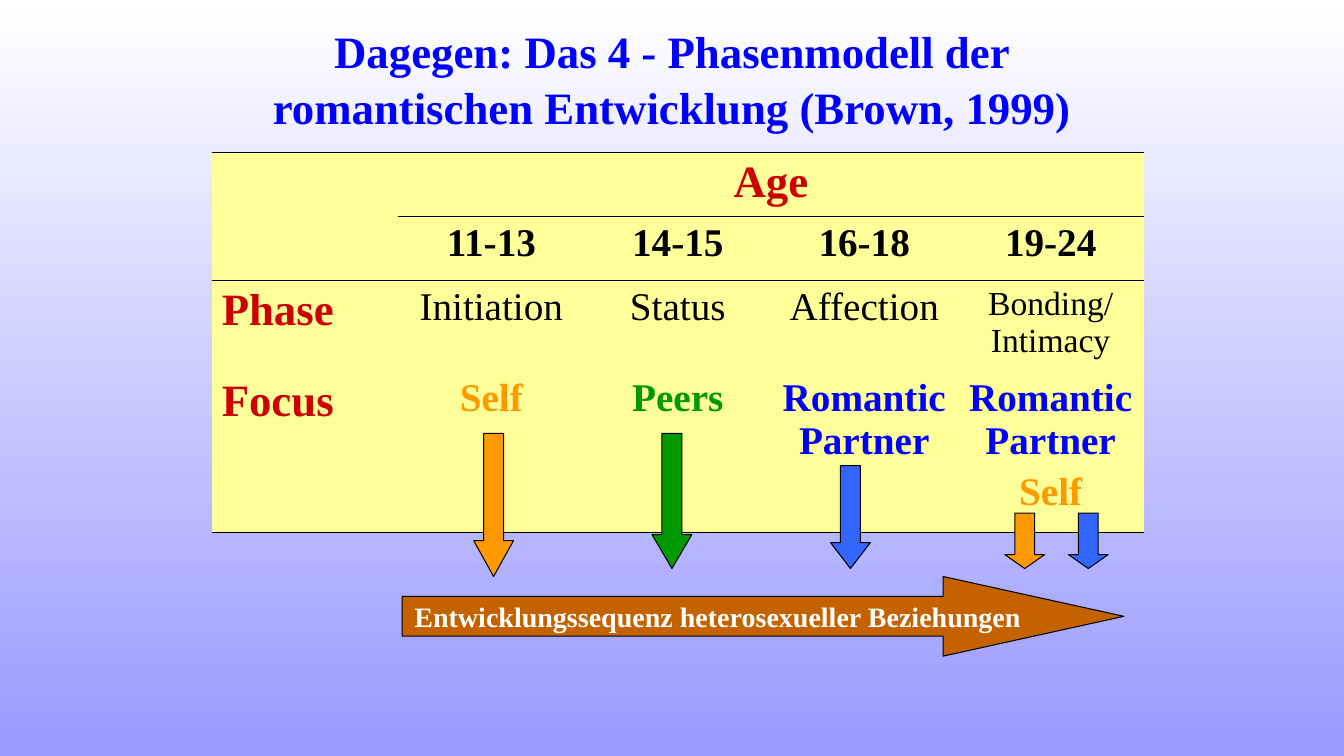
from lxml import etree
from pptx import Presentation
from pptx import util as u
from pptx.dml.color import RGBColor
from pptx.enum import shapes, text
from pptx.oxml import ns

Pt = u.Pt
FONT = "Times New Roman"
HEX = {"black": "000000", "white": "FFFFFF", "lilac": "9999FF", "cream": "FFFF99",
       "red": "CC0000", "blue": "0000FF", "sky": "3366FF", "green": "009900",
       "orange": "FF9900", "brown": "C46200"}
RGB = {name: RGBColor.from_string(code) for name, code in HEX.items()}


def add_run(para, words, size, color, bold=True):
    run = para.add_run()
    run.text = words
    font = run.font
    font.name, font.size, font.bold = FONT, Pt(size), bold
    font.color.rgb = RGB[color]


def add_arrow(kind, box, head, color):
    """Add a block arrow whose head length is a ratio of its short side."""
    arrow = slide.shapes.add_shape(kind, *[Pt(n) for n in box])
    arrow.shadow.inherit = False
    arrow.adjustments[0], arrow.adjustments[1] = 0.5, head
    arrow.fill.solid()
    arrow.fill.fore_color.rgb = RGB[color]
    arrow.line.color.rgb = RGB["black"]
    arrow.line.width = Pt(0.75)
    return arrow


deck = Presentation()
deck.slide_width, deck.slide_height = Pt(960), Pt(540)
slide = deck.slides.add_slide(deck.slide_layouts[5])

# Background
back = slide.background.fill
back.gradient()
back.gradient_angle = 270
for stop, name in zip(back.gradient_stops, ("white", "lilac")):
    stop.color.rgb = RGB[name]

# Title
title = slide.shapes.title
title.left, title.top, title.width, title.height = Pt(156), Pt(10), Pt(648), Pt(90)
frame = title.text_frame
frame.auto_size = text.MSO_AUTO_SIZE.NONE
frame.vertical_anchor = text.MSO_ANCHOR.MIDDLE
para = frame.paragraphs[0]
para.alignment = text.PP_ALIGN.CENTER
para.line_spacing = 1.05
add_run(para, "Dagegen: Das 4 - Phasenmodell der romantischen Entwicklung (Brown, 1999)",
        32, "blue")

# Phase table: each cell lists its paragraphs as (words, size, color, bold)
partner = ("Romantic Partner", 28, "blue", True)
myself = ("Self", 28, "orange", True)
ROWS = [
    [[], [("Age", 32, "red", True)], [], [], []],
    [[]] + [[(age, 28, "black", True)] for age in ("11-13", "14-15", "16-18", "19-24")],
    [[("Phase", 32, "red", True)]]
    + [[(phase, 28, "black", False)] for phase in ("Initiation", "Status", "Affection")]
    + [[("Bonding/Intimacy", 24, "black", False)]],
    [[("Focus", 32, "red", True)], [myself], [("Peers", 28, "green", True)],
     [partner], [partner, myself]],
]
HIGH = [45.75, 45.75, 65, 115]
WIDE = 133.2
table = slide.shapes.add_table(4, 5, Pt(151.2), Pt(108.75), Pt(5 * WIDE), Pt(sum(HIGH))).table
table.first_row = table.horz_banding = False
for col in table.columns:
    col.width = Pt(WIDE)
for row, high in zip(table.rows, HIGH):
    row.height = Pt(high)
table.cell(0, 1).merge(table.cell(0, 4))

for r, row in enumerate(ROWS):
    for c, lines in enumerate(row):
        cell = table.cell(r, c)
        cell.fill.solid()
        cell.fill.fore_color.rgb = RGB["cream"]
        # Rules run above the table, below "Age", below the ages and at the foot
        ruled = {0, 2, 4} if c == 0 else {0, 1, 2, 4}
        edges = {"lnL": False, "lnR": False, "lnT": r in ruled, "lnB": r + 1 in ruled}
        props = cell._tc.get_or_add_tcPr()
        for i, (tag, drawn) in enumerate(edges.items()):
            edge = etree.Element(ns.qn("a:" + tag), w=str(Pt(1)))
            props.insert(i, edge)
            if drawn:
                fill = etree.SubElement(edge, ns.qn("a:solidFill"))
                etree.SubElement(fill, ns.qn("a:srgbClr"), val=HEX["black"])
            else:
                etree.SubElement(edge, ns.qn("a:noFill"))
        frame = cell.text_frame
        for i, line in enumerate(lines):
            para = frame.add_paragraph() if i else frame.paragraphs[0]
            para.alignment = text.PP_ALIGN.CENTER if c else text.PP_ALIGN.LEFT
            if i:
                para.space_before = Pt(5.6)
            add_run(para, *line)

# Arrows from each focus down to the sequence: left, top, foot, head, color
DOWN = [(338.4, 309.6, 411.8, 0.9, "orange"), (465.8, 309.6, 406.1, 0.85, "green"),
        (593.3, 332.6, 406.1, 0.65, "sky"), (717.8, 366.5, 406.1, 0.35, "orange"),
        (763.2, 366.5, 406.1, 0.35, "sky")]
for left, top, foot, head, color in DOWN:
    add_arrow(shapes.MSO_SHAPE.DOWN_ARROW, (left, top, 28.4, foot - top), head, color)

course = add_arrow(shapes.MSO_SHAPE.RIGHT_ARROW, (287.3, 411.8, 515.5, 56.9), 2.27, "brown")
frame = course.text_frame
frame.word_wrap = False
frame.vertical_anchor = text.MSO_ANCHOR.MIDDLE
para = frame.paragraphs[0]
para.alignment = text.PP_ALIGN.CENTER
add_run(para, "Entwicklungssequenz heterosexueller Beziehungen", 20, "white")

deck.save("out.pptx")
